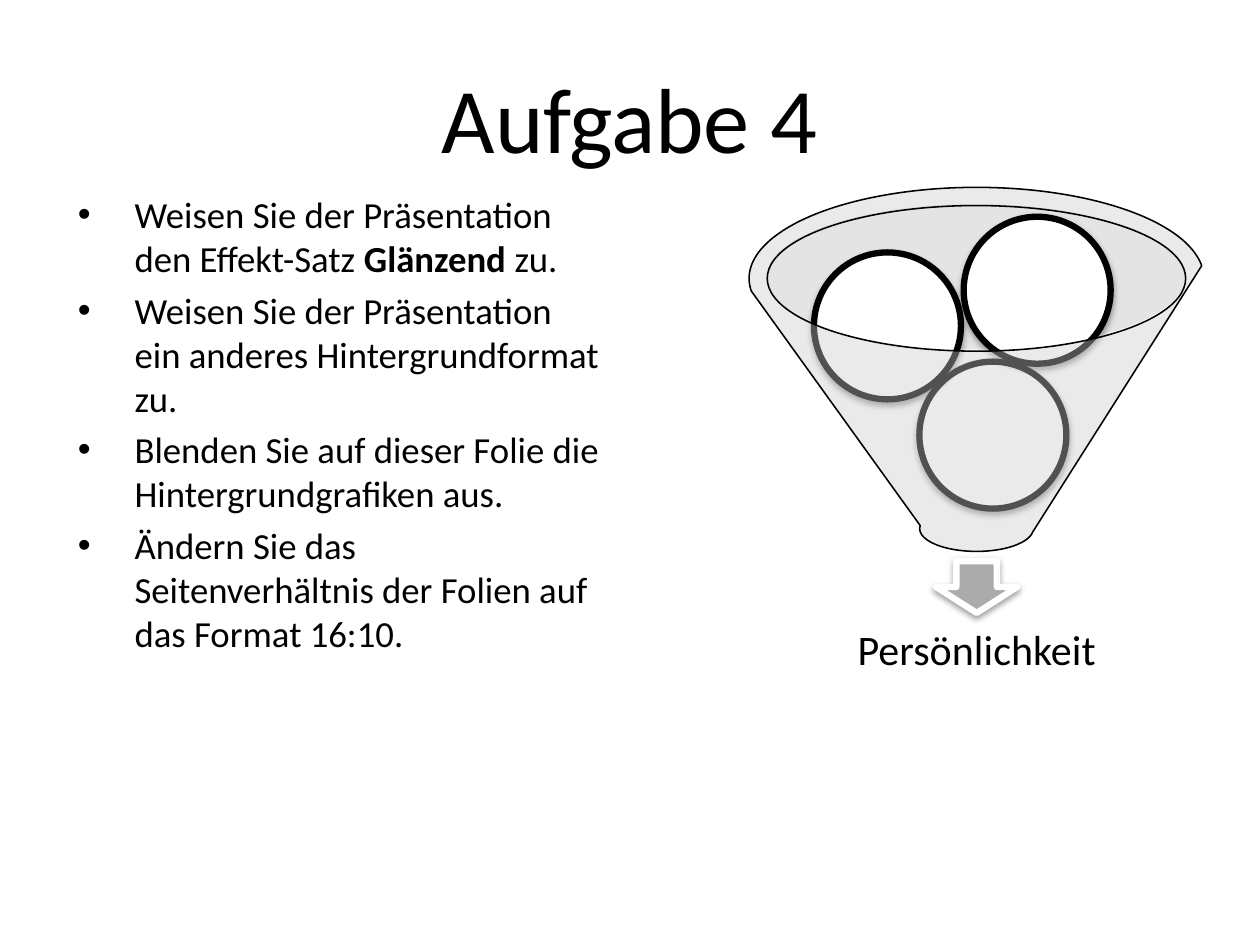
from lxml.etree import SubElement
from pptx import Presentation
from pptx.dml.color import RGBColor
from pptx.enum.shapes import MSO_SHAPE
from pptx.enum.text import MSO_ANCHOR, PP_ALIGN
from pptx.oxml import parse_xml
from pptx.oxml.ns import nsdecls, qn
from pptx.util import Pt

SHADOW = f"""<a:effectLst {nsdecls("a")}>
  <a:outerShdw blurRad="{Pt(3.1)}" dist="{Pt(1.6)}" dir="5400000" rotWithShape="0">
    <a:srgbClr val="000000"><a:alpha val="38000"/></a:srgbClr>
  </a:outerShdw>
</a:effectLst>"""


def style(font, size):
    font.name = "Calibri"
    font.size = Pt(size)
    font.color.rgb = RGBColor.from_string("000000")


def draw(kind, box, fill, line=None, width=0, alpha=None, shadow=False):
    """Add a preset shape; alpha is the opacity of its fill in percent."""
    shape = slide.shapes.add_shape(kind, *map(Pt, box))
    shape.shadow.inherit = False
    shape.fill.solid()
    shape.fill.fore_color.rgb = RGBColor.from_string(fill)
    props = shape.element.spPr
    if alpha:
        tint = props.find(qn("a:solidFill")).find(qn("a:srgbClr"))
        SubElement(tint, qn("a:alpha"), val=str(alpha * 1000))
    if line:
        shape.line.color.rgb = RGBColor.from_string(line)
        shape.line.width = Pt(width)
    else:
        shape.line.fill.background()
    if shadow:
        props.replace(props.find(qn("a:effectLst")), parse_xml(SHADOW))


deck = Presentation()
deck.slide_width, deck.slide_height = Pt(600), Pt(450)
slide = deck.slides.add_slide(deck.slide_layouts[5])

title = slide.shapes.title
title.left, title.top, title.width, title.height = map(Pt, (30, 18, 540, 75))
title.text_frame.text = "Aufgabe 4"
title.text_frame.vertical_anchor = MSO_ANCHOR.MIDDLE
head = title.text_frame.paragraphs[0]
head.alignment = PP_ALIGN.CENTER
style(head.font, 44)

# Task list: each task is a row of (text, bold) runs
tasks = [
    [("Weisen Sie der Präsentation den Effekt-Satz ", False),
     ("Glänzend ", True), ("zu.", False)],
    [("Weisen Sie der Präsentation ein anderes Hintergrundformat zu.", False)],
    [("Blenden Sie auf dieser Folie die Hintergrundgrafiken aus.", False)],
    [("Ändern Sie das Seitenverhältnis der Folien auf das Format 16:10.", False)],
]
body = slide.shapes.add_textbox(*map(Pt, (30, 88, 265, 248))).text_frame
body.word_wrap = True
for i, task in enumerate(tasks):
    para = body.add_paragraph() if i else body.paragraphs[0]
    para.space_before = Pt(3.5)
    style(para.font, 17.5)
    for text, bold in task:
        run = para.add_run()
        run.text = text
        run.font.bold = bold
    props = para._p.get_or_add_pPr()
    props.set("marL", str(Pt(27)))
    props.set("indent", str(-Pt(27)))
    SubElement(props, qn("a:buFont"), typeface="Arial")
    SubElement(props, qn("a:buChar"), char="•")

# Funnel, from back to front
draw(MSO_SHAPE.OVAL, (365, 97.2, 199.4, 69.2), "BDBDBD", alpha=40)
draw(MSO_SHAPE.DOWN_ARROW, (445.8, 267.2, 38.6, 24.7), "ABABAB", "FFFFFF", 3, shadow=True)

label = slide.shapes.add_textbox(*map(Pt, (372.1, 287.4, 186, 46.2))).text_frame
label.word_wrap = True
label.vertical_anchor = MSO_ANCHOR.MIDDLE
label.margin_left = label.margin_right = Pt(11.2)
label.margin_top = label.margin_bottom = Pt(11.2)
goal = label.paragraphs[0]
goal.text = "Persönlichkeit"
goal.alignment = PP_ALIGN.CENTER
goal.line_spacing = 0.9
goal.space_after = Pt(7)
style(goal.font, 20)

for left, top in [(437.8, 172.2), (387.6, 120.2), (458.9, 103.2)]:
    draw(MSO_SHAPE.OVAL, (left, top, 70, 70), "FFFFFF", "000000", 3, shadow=True)
draw(MSO_SHAPE.FUNNEL, (356.7, 89.2, 216.6, 173.4), "CCCCCC", "000000", 0.75, alpha=40)

deck.save("out.pptx")
